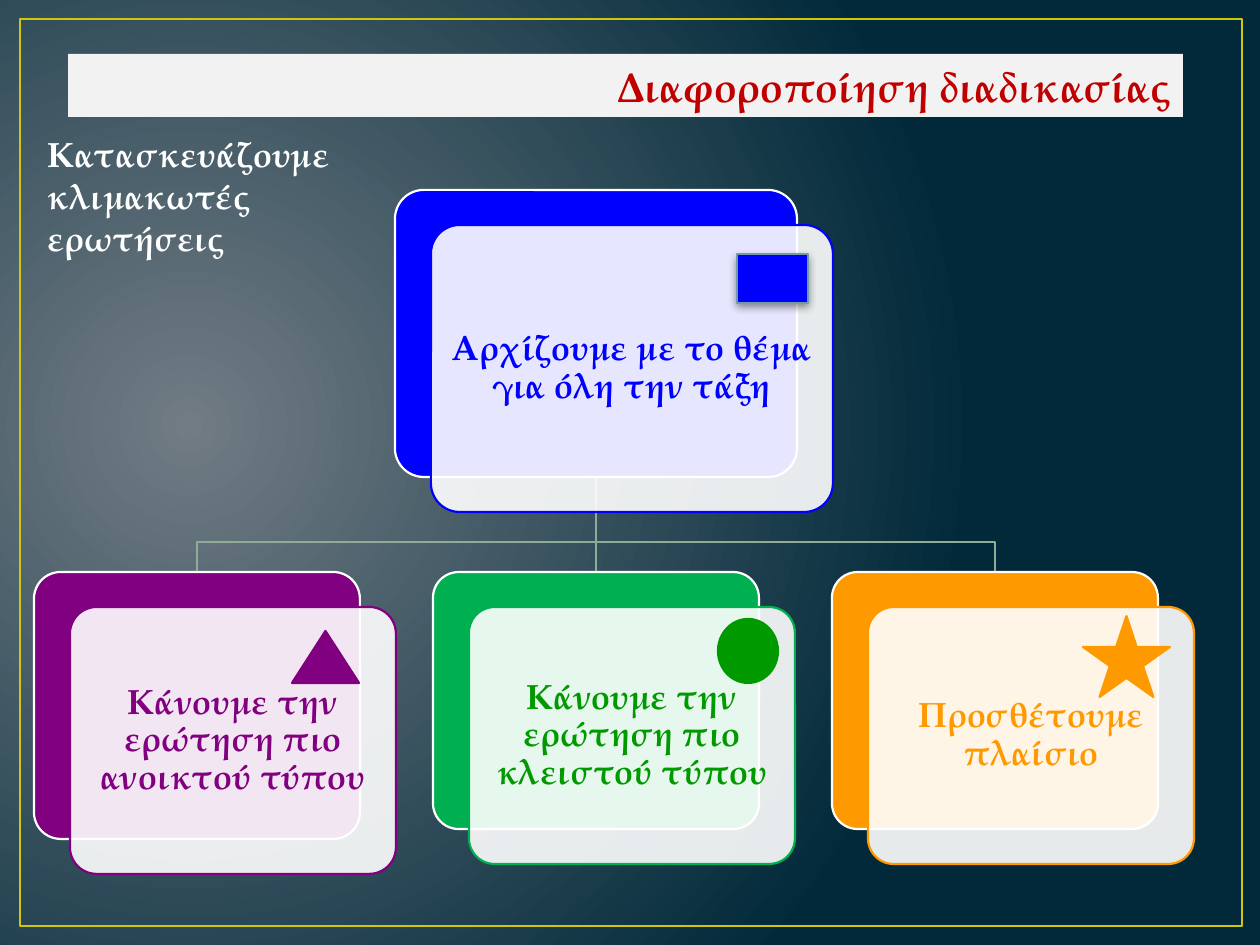
from dataclasses import dataclass

from lxml.etree import SubElement
from pptx import Presentation
from pptx.dml.color import RGBColor
from pptx.enum.shapes import MSO_CONNECTOR, MSO_SHAPE
from pptx.enum.text import MSO_ANCHOR, PP_ALIGN
from pptx.oxml.ns import qn
from pptx.util import Emu, Pt

SCALE = 914400 / 126
FONT = "TeX Gyre Pagella"
COLORS = {
    "glow": "717C84", "night": "01293A", "frame": "CFC60D", "banner": "F2F2F2",
    "title": "C00000", "white": "FFFFFF", "branch": "90AC97", "blue": "0000FF",
    "purple": "800080", "green": "00B050", "leaf": "009900", "orange": "FF9900",
    "edge": "759AA5", "black": "000000",
}
CARD_SHIFT = (36, 35)
TEXT_INSET = 8
CHILD_LEFT, CHILD_PITCH, CHILD_TOP, CHILD_WIDTH = 34, 399, 572, 326
BRANCH_Y = 542


@dataclass(frozen=True)
class Box:
    left: int
    top: int
    width: int
    height: int

    @property
    def center_x(self) -> int:
        return self.left + self.width // 2

    @property
    def bottom(self) -> int:
        return self.top + self.height

    def emu(self) -> tuple:
        return tuple(px(v) for v in (self.left, self.top, self.width, self.height))


@dataclass(frozen=True)
class Card:
    box: Box
    color: str
    text_color: str
    text: str


@dataclass(frozen=True)
class Symbol:
    kind: MSO_SHAPE
    box: Box
    color: str
    edge: str
    edge_width: float = 1.25


def child_box(column: int, height: int) -> Box:
    return Box(CHILD_LEFT + column * CHILD_PITCH, CHILD_TOP, CHILD_WIDTH, height)


ROOT = Card(Box(395, 190, 402, 287), "blue", "blue",
            "Αρχίζουμε με το θέμα για όλη την τάξη")
CHILDREN = [
    Card(child_box(0, 267), "purple", "purple", "Κάνουμε την ερώτηση πιο ανοικτού τύπου"),
    Card(child_box(1, 257), "green", "leaf", "Κάνουμε την ερώτηση πιο κλειστού τύπου"),
    Card(child_box(2, 257), "orange", "orange", "Προσθέτουμε πλαίσιο"),
]
ROOT_SYMBOL = Symbol(MSO_SHAPE.RECTANGLE, Box(737, 254, 71, 49), "blue", "edge", 0.75)
CHILD_SYMBOLS = [
    Symbol(MSO_SHAPE.ISOSCELES_TRIANGLE, Box(292, 631, 67, 52), "purple", "purple"),
    Symbol(MSO_SHAPE.OVAL, Box(718, 619, 60, 64), "leaf", "leaf"),
    Symbol(MSO_SHAPE.STAR_5_POINT, Box(1083, 616, 87, 81), "orange", "orange"),
]


def px(value: int) -> Emu:
    return Emu(round(value * SCALE))


def rgb(name: str) -> RGBColor:
    return RGBColor.from_string(COLORS[name])


def set_line(shape, color: str, width: float) -> None:
    shape.line.color.rgb = rgb(color)
    shape.line.width = Pt(width)


def add_panel(slide, kind, box: Box, fill=None, line=None, line_width=1.25, alpha=100):
    """Add a preset shape; no fill or line name means none is drawn."""
    panel = slide.shapes.add_shape(kind, *box.emu())
    panel.shadow.inherit = False
    if fill:
        panel.fill.solid()
        panel.fill.fore_color.rgb = rgb(fill)
    else:
        panel.fill.background()
    if line:
        set_line(panel, line, line_width)
    else:
        panel.line.fill.background()
    if alpha < 100:
        tint = panel.element.spPr.find(qn("a:solidFill")).find(qn("a:srgbClr"))
        SubElement(tint, qn("a:alpha"), val=str(alpha * 1000))
    if kind == MSO_SHAPE.ROUNDED_RECTANGLE:
        panel.adjustments[0] = 0.1
    return panel


def write(holder, text: str, color: str, size: int, frame_format: dict,
          paragraph_format: dict) -> None:
    frame = holder.text_frame
    paragraph = frame.paragraphs[0]
    run = paragraph.add_run()
    run.text = text
    run.font.color.rgb = rgb(color)
    font_format = {"name": FONT, "size": Pt(size), "bold": True}
    for target, values in ((frame, {"word_wrap": True, **frame_format}),
                           (paragraph, paragraph_format), (run.font, font_format)):
        for key, value in values.items():
            setattr(target, key, value)


def add_card(slide, card: Card):
    """Draw the solid back, the translucent front and the text; return the back."""
    box = card.box
    front = Box(box.left + CARD_SHIFT[0], box.top + CARD_SHIFT[1], box.width, box.height)
    label = Box(front.left + TEXT_INSET, front.top + TEXT_INSET,
                front.width - 2 * TEXT_INSET, front.height - 2 * TEXT_INSET)
    back = add_panel(slide, MSO_SHAPE.ROUNDED_RECTANGLE, box, card.color, "white")
    add_panel(slide, MSO_SHAPE.ROUNDED_RECTANGLE, front, "white", card.color, alpha=90)
    margins = {f"margin_{side}": px(10) for side in ("left", "top", "right", "bottom")}
    write(slide.shapes.add_textbox(*label.emu()), card.text, card.text_color, 20,
          {"vertical_anchor": MSO_ANCHOR.MIDDLE, **margins},
          {"alignment": PP_ALIGN.CENTER, "line_spacing": 0.9})
    return back


def add_elbow(slide, parent: Box, child: Box) -> None:
    pen = slide.shapes.build_freeform(parent.center_x, parent.bottom, scale=SCALE)
    pen.add_line_segments([(parent.center_x, BRANCH_Y), (child.center_x, BRANCH_Y),
                           (child.center_x, child.top)], close=False)
    elbow = pen.convert_to_shape()
    elbow.shadow.inherit = False
    elbow.fill.background()
    set_line(elbow, "branch", 1.25)


def add_stem(slide, parent: Box, child: Box):
    stem = slide.shapes.add_connector(
        MSO_CONNECTOR.STRAIGHT, px(parent.center_x), px(parent.bottom),
        px(child.center_x), px(child.top))
    set_line(stem, "branch", 1.25)
    SubElement(stem.element.spPr, qn("a:effectLst"))
    return stem


def add_symbol(slide, symbol: Symbol):
    return add_panel(slide, symbol.kind, symbol.box, symbol.color, symbol.edge,
                     symbol.edge_width)


def cast_shadow(shape) -> None:
    effects = shape.element.spPr.find(qn("a:effectLst"))
    shadow = SubElement(effects, qn("a:outerShdw"), blurRad=str(Pt(5)), dist=str(Pt(2)),
                        dir="5400000", rotWithShape="0")
    tint = SubElement(shadow, qn("a:srgbClr"), val=COLORS["black"])
    SubElement(tint, qn("a:alpha"), val="43000")


def paint_background(slide) -> None:
    fill = slide.background.fill
    fill.gradient()
    for stop, color, position in zip(fill.gradient_stops, ("glow", "night"), (0, 1)):
        stop.color.rgb = rgb(color)
        stop.position = position
    gradient = next(slide.element.iter(qn("a:gradFill")))
    gradient.remove(gradient.find(qn("a:lin")))
    circle = SubElement(gradient, qn("a:path"), path="circle")
    SubElement(circle, qn("a:fillToRect"), l="15000", t="50000", r="85000", b="60000")


def main() -> None:
    deck = Presentation()
    deck.slide_width, deck.slide_height = px(1260), px(945)
    slide = deck.slides.add_slide(deck.slide_layouts[6])
    paint_background(slide)
    add_panel(slide, MSO_SHAPE.RECTANGLE, Box(20, 19, 1222, 907), line="frame", line_width=1.5)
    banner = add_panel(slide, MSO_SHAPE.RECTANGLE, Box(68, 54, 1115, 63), "banner")
    write(banner, "Διαφοροποίηση διαδικασίας", "title", 24,
          {"vertical_anchor": MSO_ANCHOR.TOP}, {"alignment": PP_ALIGN.RIGHT})

    left, middle, right = (child.box for child in CHILDREN)
    add_elbow(slide, ROOT.box, right)
    stem = add_stem(slide, ROOT.box, middle)
    add_elbow(slide, ROOT.box, left)
    root_back, _, middle_back, _ = [add_card(slide, card) for card in (ROOT, *CHILDREN)]
    stem.begin_connect(root_back, 2)
    stem.end_connect(middle_back, 0)

    cast_shadow(add_symbol(slide, ROOT_SYMBOL))
    for symbol in CHILD_SYMBOLS:
        add_symbol(slide, symbol)
    write(slide.shapes.add_textbox(*Box(35, 84, 325, 183).emu()),
          "Κατασκευάζουμε κλιμακωτές ερωτήσεις", "white", 20, {"margin_top": px(48)}, {})
    deck.save("out.pptx")


if __name__ == "__main__":
    main()
